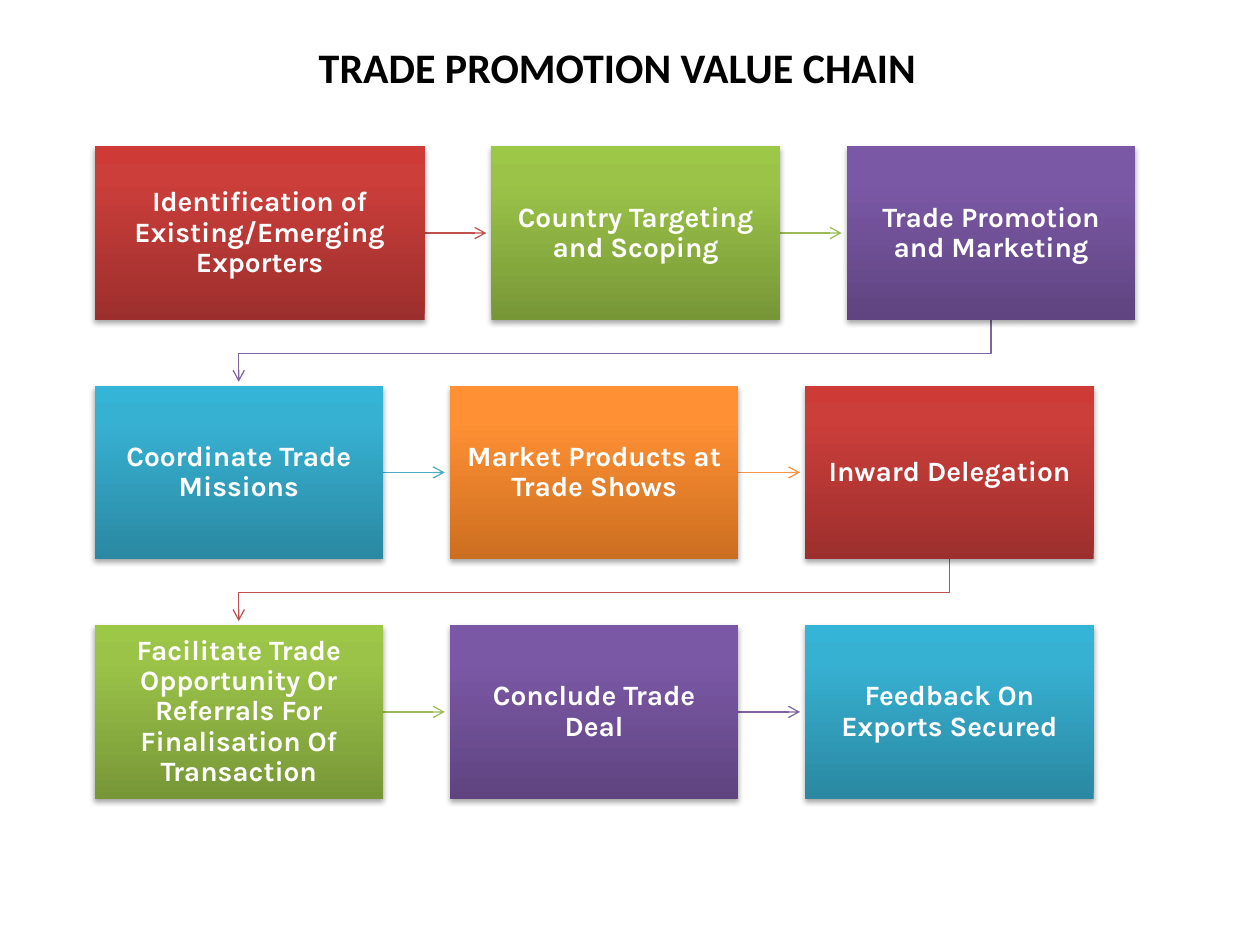
import copy

import pptx
import pptx.dml.color
import pptx.enum.shapes
import pptx.enum.text
import pptx.oxml
import pptx.oxml.ns
import pptx.util
from pptx.dml.color import RGBColor
from pptx.util import Inches, Pt

WHITE = RGBColor(0xFF, 0xFF, 0xFF)
BLACK = RGBColor(0x00, 0x00, 0x00)

# Each theme: gradient from bottom to top, then the colour of the outgoing arrow
RED = ([RGBColor(0x9C, 0x2F, 0x2D), RGBColor(0xCB, 0x3E, 0x3A), RGBColor(0xCE, 0x3B, 0x37)],
       RGBColor(0xC0, 0x50, 0x4D))
GREEN = ([RGBColor(0x77, 0x97, 0x37), RGBColor(0x9B, 0xC3, 0x48), RGBColor(0x9D, 0xC7, 0x46)],
         RGBColor(0x9B, 0xBB, 0x59))
PURPLE = ([RGBColor(0x5F, 0x44, 0x80), RGBColor(0x7B, 0x58, 0xA6), RGBColor(0x7C, 0x57, 0xA8)],
          RGBColor(0x80, 0x64, 0xA2))
BLUE = ([RGBColor(0x2A, 0x88, 0xA2), RGBColor(0x37, 0xB1, 0xD2), RGBColor(0x34, 0xB4, 0xD6)],
        RGBColor(0x4B, 0xAC, 0xC6))
ORANGE = ([RGBColor(0xCC, 0x6E, 0x20), RGBColor(0xFF, 0x90, 0x34), RGBColor(0xFF, 0x91, 0x36)],
          RGBColor(0xF7, 0x96, 0x46))

TITLE = "TRADE PROMOTION VALUE CHAIN"
STAGES = [
    [("Identification of Existing/Emerging Exporters", RED),
     ("Country Targeting and Scoping", GREEN),
     ("Trade Promotion and Marketing", PURPLE)],
    [("Coordinate Trade Missions", BLUE),
     ("Market Products at Trade Shows", ORANGE),
     ("Inward Delegation", RED)],
    [("Facilitate Trade Opportunity Or Referrals For Finalisation Of Transaction", GREEN),
     ("Conclude Trade Deal", PURPLE),
     ("Feedback On Exports Secured", BLUE)],
]

# Layout in inches
LEFT, TOP = 0.75, 1.16
STAGE_W, FIRST_W, STAGE_H = 2.29, 2.62, 1.38
GAP = 0.53
ARROW = 0.49

GRADIENT_POSITIONS = (0, 0.8, 1)
SHADOW = ('<a:outerShdw %s blurRad="40000" dist="23000" dir="5400000" rotWithShape="0">'
          '<a:srgbClr val="000000"><a:alpha val="35000"/></a:srgbClr></a:outerShdw>'
          % pptx.oxml.ns.nsdecls("a"))
ARROWHEAD = '<a:tailEnd %s type="arrow"/>' % pptx.oxml.ns.nsdecls("a")
NO_EFFECTS = '<a:effectLst %s/>' % pptx.oxml.ns.nsdecls("a")


def write(shape, text, *, size, font, color, spacing, inset=None):
    frame = shape.text_frame
    frame.word_wrap = True
    frame.vertical_anchor = pptx.enum.text.MSO_ANCHOR.MIDDLE
    if inset is not None:
        frame.margin_left = frame.margin_right = Inches(inset)
        frame.margin_top = frame.margin_bottom = Inches(inset)
    paragraph = frame.paragraphs[0]
    paragraph.alignment = pptx.enum.text.PP_ALIGN.CENTER
    paragraph.line_spacing = spacing
    run = paragraph.add_run()
    run.text = text
    run.font.size = Pt(size)
    run.font.name = font
    run.font.bold = True
    run.font.color.rgb = color


def add_stage(slide, text, gradient, x, y, width):
    stage = slide.shapes.add_shape(pptx.enum.shapes.MSO_SHAPE.RECTANGLE, Inches(x), Inches(y),
                                   Inches(width), Inches(STAGE_H))
    stage.fill.gradient()
    stage.fill.gradient_angle = 90
    stops = stage.element.spPr.find(".//" + pptx.oxml.ns.qn("a:gsLst"))
    stops.insert(1, copy.deepcopy(stops[0]))
    for stop, position, color in zip(stage.fill.gradient_stops, GRADIENT_POSITIONS, gradient):
        stop.position = position
        stop.color.rgb = color
    stage.line.fill.background()
    stage.shadow.inherit = False
    effects = stage.element.spPr.find(pptx.oxml.ns.qn("a:effectLst"))
    effects.append(pptx.oxml.parse_xml(SHADOW))
    write(stage, text, size=16, font="Karla", color=WHITE, spacing=0.9, inset=0.12)


def style_arrow(arrow, color):
    arrow.line.color.rgb = color
    arrow.line.width = Pt(0.75)
    arrow.line._get_or_add_ln().append(pptx.oxml.parse_xml(ARROWHEAD))
    arrow.element.spPr.append(pptx.oxml.parse_xml(NO_EFFECTS))


def add_next_arrow(slide, x, y, color):
    arrow = slide.shapes.add_connector(pptx.enum.shapes.MSO_CONNECTOR.STRAIGHT, Inches(x),
                                       Inches(y), Inches(x + ARROW), Inches(y))
    style_arrow(arrow, color)


def add_return_arrow(slide, x, y, color):
    """Lead from below the last stage of a row to the first stage of the next."""
    end_x = LEFT + STAGE_W / 2
    turn_y = y + GAP / 2
    corners = [(x, turn_y), (end_x, turn_y), (end_x, y + ARROW)]
    builder = slide.shapes.build_freeform(Inches(x), Inches(y))
    builder.add_line_segments([(Inches(a), Inches(b)) for a, b in corners], close=False)
    arrow = builder.convert_to_shape()
    arrow.fill.background()
    style_arrow(arrow, color)


def main():
    deck = pptx.Presentation()
    deck.slide_width, deck.slide_height = Inches(10), Inches(7.5)
    slide = deck.slides.add_slide(deck.slide_layouts[6])

    # Value chain, row by row
    for row, stages in enumerate(STAGES):
        x = LEFT
        y = TOP + row * (STAGE_H + GAP - 0.01)
        for column, (text, (gradient, arrow_color)) in enumerate(stages):
            width = FIRST_W if row == column == 0 else STAGE_W
            if column < len(stages) - 1:
                add_next_arrow(slide, x + width, y + STAGE_H / 2, arrow_color)
            elif row < len(STAGES) - 1:
                add_return_arrow(slide, x + width / 2, y + STAGE_H, arrow_color)
            add_stage(slide, text, gradient, x, y, width)
            x += width + GAP

    # Title
    title = slide.shapes.add_textbox(Inches(0.38), Inches(0.38), Inches(9.04), Inches(0.4))
    write(title, TITLE, size=24, font="Calibri", color=BLACK, spacing=0.7)

    deck.save("out.pptx")


if __name__ == "__main__":
    main()
